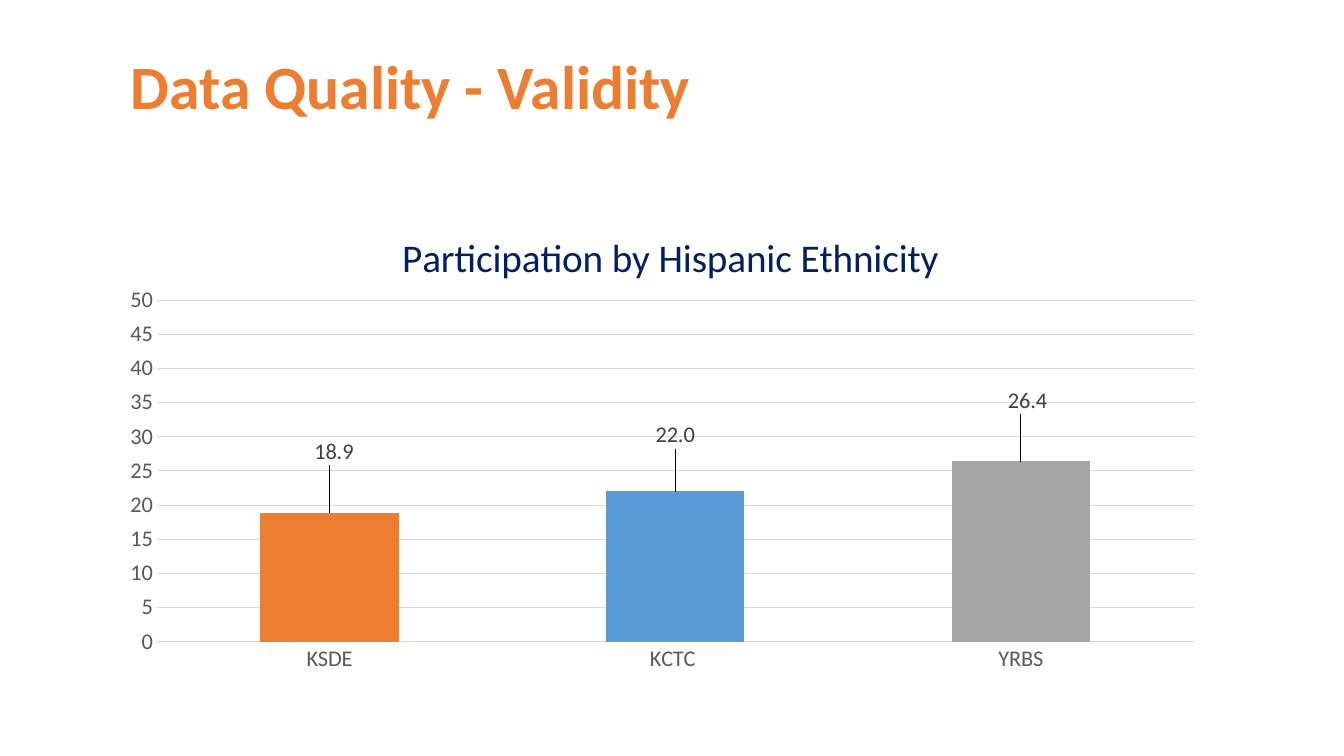
import pptx
import pptx.chart.data
import pptx.dml.color
import pptx.enum.chart
import pptx.enum.text
import pptx.oxml
import pptx.oxml.ns
import pptx.util

Inches = pptx.util.Inches
Pt = pptx.util.Pt
RGBColor = pptx.dml.color.RGBColor

ORANGE = RGBColor(0xED, 0x7D, 0x31)
BLUE = RGBColor(0x5B, 0x9B, 0xD5)
GRAY = RGBColor(0xA5, 0xA5, 0xA5)
NAVY = RGBColor(0x00, 0x20, 0x60)
AXIS_TEXT = RGBColor(0x59, 0x59, 0x59)
LABEL_TEXT = RGBColor(0x40, 0x40, 0x40)
GRID = RGBColor(0xD9, 0xD9, 0xD9)


class SlideBuilder:
    """Holds the font and current slide and adds styled elements to it."""

    def __init__(self, prs, font):
        self.s = prs.slides.add_slide(prs.slide_layouts[6])
        self.font = font

    def style(self, font, size, color, bold=False):
        font.name = self.font
        font.size = Pt(size)
        font.color.rgb = color
        font.bold = bold

    def title(self, text, left, top, width, height):
        sp = self.s.shapes.add_textbox(Inches(left), Inches(top), Inches(width), Inches(height))
        tf = sp.text_frame
        tf.word_wrap = True
        tf.vertical_anchor = pptx.enum.text.MSO_ANCHOR.MIDDLE
        tf.text = text
        p = tf.paragraphs[0]
        p.line_spacing = 0.9
        self.style(p.runs[0].font, 44, ORANGE, True)

    def layout(self, target="", **values):
        ns = pptx.oxml.ns.nsdecls("c")
        inner = f'<c:layoutTarget val="{target}"/>' if target else ""
        if "w" in values or target == "" and values.pop("edge", False):
            inner += '<c:xMode val="edge"/><c:yMode val="edge"/>'
        inner += "".join(f'<c:{name} val="{value}"/>' for name, value in values.items())
        return pptx.oxml.parse_xml(
            f"<c:layout {ns}><c:manualLayout>{inner}</c:manualLayout></c:layout>")

    def place(self, chart, parent, layout, after):
        element = chart._chartSpace.xpath(parent)[0]
        for old in element.xpath("./c:layout"):
            element.remove(old)
        element.insert(after, layout)

    def axis(self, axis):
        axis.major_tick_mark = pptx.enum.chart.XL_TICK_MARK.NONE
        axis.minor_tick_mark = pptx.enum.chart.XL_TICK_MARK.NONE
        axis.format.line.fill.background()
        self.style(axis.tick_labels.font, 16, AXIS_TEXT)

    def column_chart(self, title, bars, left, top, width, height):
        data = pptx.chart.data.CategoryChartData(number_format="0.0")
        data.categories = [name for name, *_ in bars]
        data.add_series("Series 1", [value for _, value, *_ in bars])
        chart = self.s.shapes.add_chart(
            pptx.enum.chart.XL_CHART_TYPE.COLUMN_CLUSTERED,
            Inches(left), Inches(top), Inches(width), Inches(height), data).chart
        chart.has_legend = False
        chart.font.name = self.font
        chart.font.size = Pt(10)

        chart.has_title = True
        tf = chart.chart_title.text_frame
        tf.text = title
        self.style(tf.paragraphs[0].runs[0].font, 28, NAVY)
        self.place(chart, ".//c:chart/c:title", self.layout(edge=True, x=0.26, y=0.04), 1)
        self.place(chart, ".//c:plotArea",
                   self.layout("inner", x=0.045, y=0.2, w=0.935, h=0.715), 0)

        self.axis(chart.category_axis)
        axis = chart.value_axis
        self.axis(axis)
        axis.minimum_scale, axis.maximum_scale, axis.major_unit = 0, 50, 5
        axis.tick_labels.number_format = "0"
        axis.tick_labels.number_format_is_linked = False
        axis.major_gridlines.format.line.color.rgb = GRID
        axis.major_gridlines.format.line.width = Pt(0.75)

        plot = chart.plots[0]
        plot.gap_width = 150
        plot.vary_by_categories = False
        series = plot.series[0]
        series.format.fill.solid()
        series.format.fill.fore_color.rgb = ORANGE
        labels = series.data_labels
        labels.show_value = True
        labels.number_format = "0.0"
        labels.number_format_is_linked = False
        self.style(labels.font, 16, LABEL_TEXT)
        for i, (_, _, color, dx, dy) in enumerate(bars):
            point = series.points[i]
            point.format.fill.solid()
            point.format.fill.fore_color.rgb = color
            self.style(point.data_label.font, 16, LABEL_TEXT)
            point.data_label.position = pptx.enum.chart.XL_LABEL_POSITION.OUTSIDE_END
            self.place(chart, f".//c:dLbl[c:idx/@val='{i}']", self.layout(x=dx, y=dy), 1)


def main():
    prs = pptx.Presentation()
    prs.slide_width = Inches(13.33)
    prs.slide_height = Inches(7.5)
    slide = SlideBuilder(prs, "Calibri")
    slide.title("Data Quality - Validity", 1.2, 0.31, 11, 1.16)
    bars = [
        ("KSDE", 18.9, ORANGE, 0.004, -0.09),
        ("KCTC ", 22.0, BLUE, 0, -0.08),
        ("YRBS", 26.4, GRAY, 0.006, -0.09),
    ]
    slide.column_chart("Participation by Hispanic Ethnicity", bars, 1.06, 2.03, 11, 4.74)
    prs.save("out.pptx")


if __name__ == "__main__":
    main()
